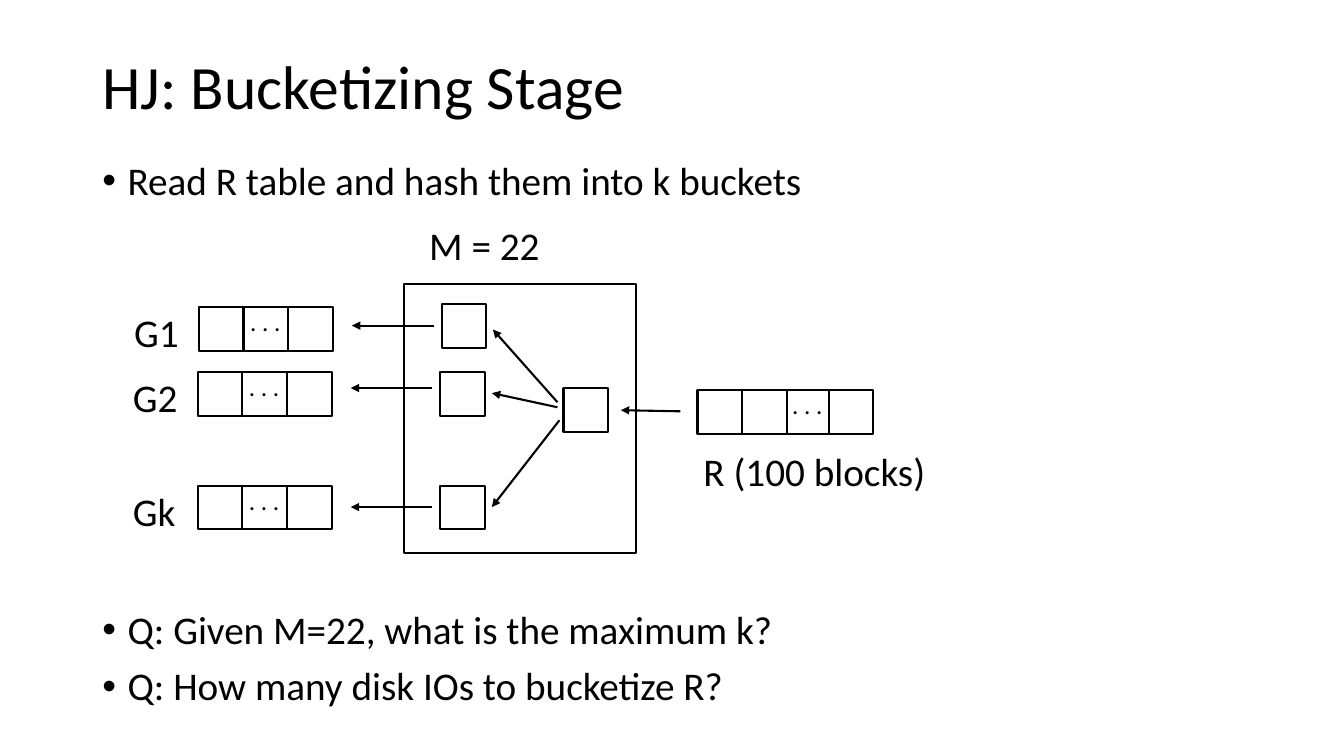
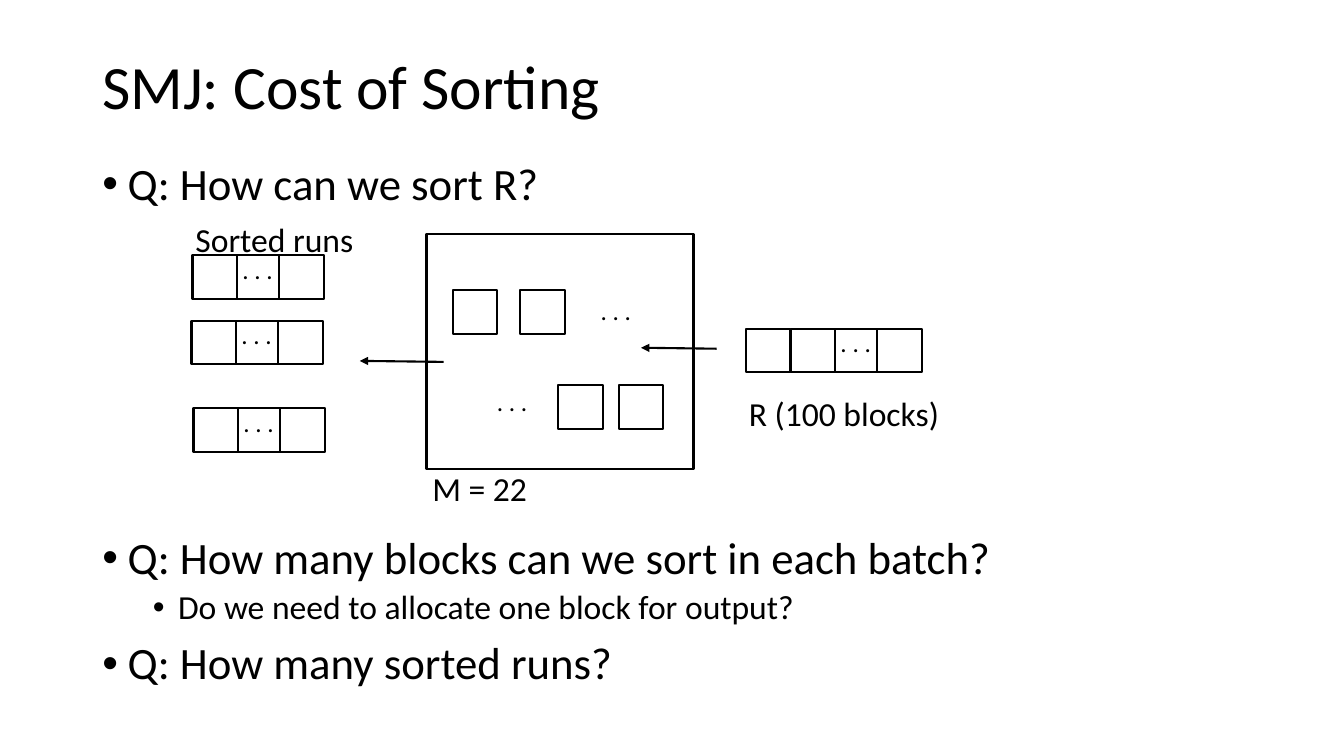
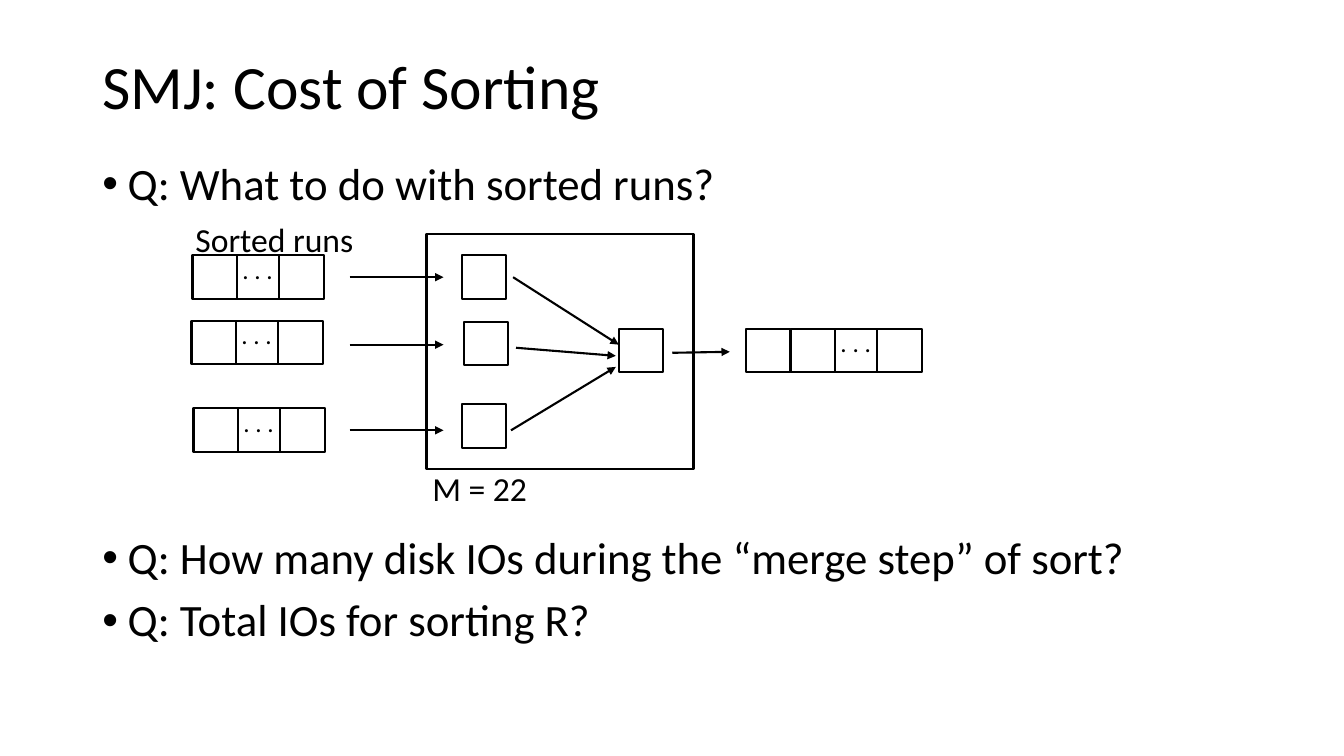
from pptx import Presentation
from pptx.dml.color import RGBColor
from pptx.enum.shapes import MSO_CONNECTOR as LINK, MSO_SHAPE as SHAPE
from pptx.enum.text import MSO_ANCHOR as ANCHOR, MSO_AUTO_SIZE as FIT, PP_ALIGN as ALIGN
from pptx.oxml.ns import qn
from pptx.util import Pt
from lxml.etree import SubElement

BLACK = RGBColor(0, 0, 0)
WHITE = RGBColor(255, 255, 255)
FONT = "Calibri"
SIDE = 31.9
TALL = 31.2
STROKE = Pt(1.5)
DOTS = ". . ."
DOT_WIDE = 36.7
LEFT = 66
WIDE = 828
RUNS = [(137.5, 182.2), (136.8, 229), (138.2, 291.6)]


def style(item, looks):
    for name, value in looks.items():
        setattr(item, name, value)


def ink(font, size):
    style(font, {"name": FONT, "size": Pt(size)})
    font.color.rgb = BLACK


def place(item, left, top, width, height):
    style(item, {"left": Pt(left), "top": Pt(top),
                 "width": Pt(width), "height": Pt(height)})


def box(slide, left, top, width=SIDE, height=TALL):
    rect = slide.shapes.add_shape(
        SHAPE.RECTANGLE, Pt(left), Pt(top), Pt(width), Pt(height))
    rect.shadow.inherit = False
    rect.fill.solid()
    rect.fill.fore_color.rgb = WHITE
    rect.line.color.rgb = BLACK
    rect.line.width = STROKE


def label(slide, text, left, top, width, size):
    note = slide.shapes.add_textbox(
        Pt(left), Pt(top), Pt(width), Pt(size * 1.22 + 7.2))
    frame = note.text_frame
    style(frame, {"text": text, "word_wrap": False,
                  "auto_size": FIT.SHAPE_TO_FIT_TEXT})
    ink(frame.paragraphs[0].runs[0].font, size)


def dots(slide, left, top):
    label(slide, DOTS, left, top, DOT_WIDE, 18)


def arrow(slide, x1, y1, x2, y2):
    line = slide.shapes.add_connector(
        LINK.STRAIGHT, Pt(x1), Pt(y1), Pt(x2), Pt(y2))
    line.line.color.rgb = BLACK
    line.line.width = STROKE
    SubElement(line.line._get_or_add_ln(), qn("a:tailEnd"), type="triangle")
    SubElement(line._element.spPr, qn("a:effectLst"))


def row(slide, left, top, count, last=30):
    gap = left + (count - 2) * SIDE
    for i in range(count - 1):
        box(slide, left + i * SIDE, top)
    box(slide, gap + last, top)
    dots(slide, gap + (last - DOT_WIDE) / 2, top - 4.2)


def bullet(para, text, size, level, before):
    style(para, {"text": text, "level": level, "line_spacing": 0.9,
                 "space_before": Pt(before)})
    ink(para.runs[0].font, size)
    props = para._p.get_or_add_pPr()
    props.set("marL", str(Pt(18 + 36 * level)))
    props.set("indent", str(Pt(-18)))
    SubElement(props, qn("a:buFont"), typeface="Arial")
    SubElement(props, qn("a:buChar"), char="•")


def page(deck, title, items):
    slide = deck.slides.add_slide(deck.slide_layouts[1])
    head, body = slide.placeholders
    head.text_frame.text = title
    head.text_frame.vertical_anchor = ANCHOR.MIDDLE
    para = head.text_frame.paragraphs[0]
    style(para, {"alignment": ALIGN.LEFT, "line_spacing": 0.9})
    ink(para.runs[0].font, 44)
    frame = body.text_frame
    frame.auto_size = FIT.NONE
    for i, item in enumerate(items):
        para = frame.add_paragraph() if i else frame.paragraphs[0]
        bullet(para, *item)
    return slide


def bucket(deck):
    slide = page(deck, "HJ: Bucketizing Stage", [
        ("Read R table and hash them into k buckets", 28, 0, 10),
        ("Q: Given M=22, what is the maximum k?", 28, 0, 290.7),
        ("Q: How many disk IOs to bucketize R?", 28, 0, 10)])
    box(slide, 288.7, 203, 165.6, 192.2)
    label(slide, "M = 22", 299.5, 154.8, 94.3, 28)
    row(slide, 498.2, 278.6, 4)
    label(slide, "R (100 blocks)", 495.4, 316.1, 175, 28)
    box(slide, 402.5, 277.2)
    arrow(slide, 486, 293.8, 443.5, 293)
    for name, left, top, cell, mid in [("G1", 142, 219.6, 217.4, 232.6),
                                       ("G2", 141.2, 265.7, 265.7, 277.2),
                                       ("Gk", 141.2, 347, 347, 362.2)]:
        row(slide, left, top, 3, SIDE)
        label(slide, name, left - 53.3, top - 2.6, 46.8, 28)
        box(slide, left + 173.4, cell)
        arrow(slide, left + 167.7, mid, left + 109.4, mid)
    for ends in [(398.2, 287.3, 352.1, 235.4),
                 (398.2, 290.9, 351.4, 280.8),
                 (399.6, 300.2, 351.4, 362.2)]:
        arrow(slide, *ends)


def sort(deck, items):
    slide = page(deck, "SMJ: Cost of Sorting", items)
    box(slide, 304.6, 167, 190.8, 167.8)
    label(slide, "M = 22", 301.7, 330.5, 82.8, 24)
    row(slide, 532.8, 234.7, 4)
    for left, top in RUNS:
        row(slide, left, top, 3)
    label(slide, "Sorted runs", 132.5, 152.6, 128.2, 24)
    return slide


def split(deck):
    slide = sort(deck, [
        ("Q: How can we sort R?", 32, 0, 10),
        ("Q: How many blocks can we sort in each batch?", 32, 0, 232.7),
        ("Do we need to allocate one block for output?", 24, 1, 5),
        ("Q: How many sorted runs?", 32, 0, 10)])
    label(slide, "R (100 blocks)", 527.8, 277.2, 151.2, 24)
    for left, top in [(323.3, 207.4), (371.5, 207.4), (398.9, 275), (442, 275)]:
        box(slide, left, top)
    dots(slide, 421.9, 207.4)
    dots(slide, 347.8, 272.2)
    arrow(slide, 316.8, 258.5, 257, 257.8)
    arrow(slide, 511.9, 249.1, 457.9, 248.4)


def merge(deck):
    slide = sort(deck, [
        ("Q: What to do with sorted runs?", 32, 0, 10),
        ("Q: How many disk IOs during the “merge step” of sort?", 32, 0, 232.7),
        ("Q: Total IOs for sorting R?", 32, 0, 10)])
    box(slide, 442, 234.7)
    for left, top, mid, fan in [(329.8, 182.2, 198, (366.5, 198, 442, 246.2)),
                                (331.2, 229.7, 246.2, (368.6, 248.4, 439.9, 254.2)),
                                (329.8, 288.7, 307.4, (365, 307.4, 439.9, 262.1))]:
        box(slide, left, top)
        arrow(slide, 249.8, mid, 316.8, mid)
        arrow(slide, *fan)
    arrow(slide, 480.2, 252, 521.3, 251.3)


def main():
    deck = Presentation()
    style(deck, {"slide_width": Pt(960), "slide_height": Pt(540)})
    for item in deck.slide_layouts[1].placeholders:
        kind = item.placeholder_format.idx
        if kind == 0:
            place(item, LEFT, 28.8, WIDE, 69.8)
        elif kind == 1:
            place(item, LEFT, 111.6, WIDE, 415)
    bucket(deck)
    split(deck)
    merge(deck)
    deck.save("out.pptx")


if __name__ == "__main__":
    main()
